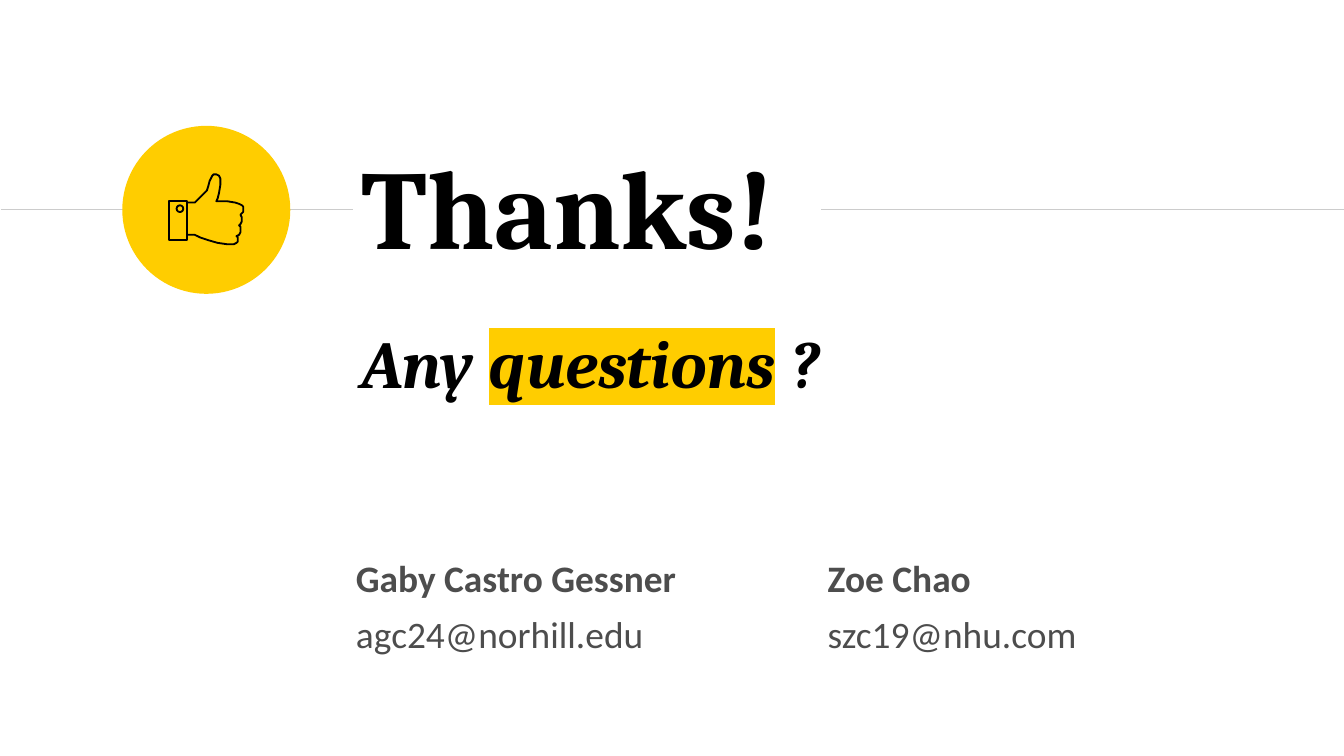
from lxml.etree import SubElement
from pptx import Presentation
from pptx.dml.color import RGBColor
from pptx.enum.shapes import MSO_CONNECTOR as Connector, MSO_SHAPE as Preset
from pptx.enum.text import MSO_ANCHOR as Anchor, MSO_AUTO_SIZE as AutoSize, PP_ALIGN as Align
from pptx.oxml.ns import qn
from pptx.util import Pt

YELLOW, BLACK, GRAY, RULE = "FFCD00", "000000", "4D4D4D", "CCCCCC"
SERIF = {"name": "Cambria", "bold": True}
SANS = {"name": "Calibri", "size": Pt(20), "italic": False}
FRAME = {"word_wrap": True, "auto_size": AutoSize.NONE,
         "margin_left": Pt(7.2), "margin_right": Pt(7.2),
         "margin_top": Pt(7.2), "margin_bottom": Pt(7.2)}

HAND = [(14, 45), (19, 45), (23, 47), (29, 49), (36, 51), (43, 52), (48, 52),
        (50, 51), (51, 50), (51, 47), (50, 46), (52, 45), (53, 43), (53, 39),
        (52, 38), (53, 37), (54, 35), (54, 32), (53, 30), (54, 29), (55, 28),
        (55, 24), (54, 23), (52, 22), (49, 21), (43, 20), (35, 20), (36, 18),
        (37, 14), (38, 8), (38, 3), (37, 1), (35, 0), (33, 0), (32, 1),
        (30, 5), (29, 9), (28, 12), (26, 14), (22, 18), (19, 21), (14, 21)]


def color(hex_value):
    return RGBColor.from_string(hex_value)


def apply(target, values):
    for name, value in values.items():
        setattr(target, name, value)


def place(shape, box):
    apply(shape, dict(zip(("left", "top", "width", "height"), map(Pt, box))))


def write(paragraph, text, style, ink, marker=None):
    run = paragraph.add_run()
    run.text = text
    run.font.color.rgb = color(ink)
    if marker:
        properties = run.font._element
        highlight = SubElement(properties, qn("a:highlight"))
        SubElement(highlight, qn("a:srgbClr")).set("val", marker)
    apply(run.font, style)


def prepare(shape, anchor, space_before):
    frame = shape.text_frame
    apply(frame, {**FRAME, "vertical_anchor": anchor})
    apply(frame.paragraphs[0], {"alignment": Align.LEFT, "space_before": Pt(space_before)})
    return frame.paragraphs[0]


def add_rule(slide, start, end, y):
    rule = slide.shapes.add_connector(Connector.STRAIGHT, Pt(start), Pt(y), Pt(end), Pt(y))
    rule.line.color.rgb = color(RULE)
    rule.line.width = Pt(0.75)
    SubElement(rule._element.spPr, qn("a:effectLst"))


def outline(shape):
    shape.shadow.inherit = False
    shape.fill.background()
    shape.line.color.rgb = color(BLACK)
    shape.line.width = Pt(1)


def add_thumb(slide, left, top):
    cuff = (left, top + 14.4, 9.4, 20.9)
    button = (left + 3.9, top + 16.6, 3.6, 3.6)
    for preset, box in ((Preset.RECTANGLE, cuff), (Preset.OVAL, button)):
        outline(slide.shapes.add_shape(preset, *map(Pt, box)))
    hand = slide.shapes.build_freeform(*HAND[0], scale=Pt(0.72))
    hand.add_line_segments(HAND[1:], close=False)
    outline(hand.convert_to_shape(Pt(left), Pt(top)))


def add_badge(slide, left, top, size):
    badge = slide.shapes.add_shape(Preset.OVAL, *map(Pt, (left, top, size, size)))
    badge.shadow.inherit = False
    badge.fill.solid()
    badge.fill.fore_color.rgb = color(YELLOW)
    badge.line.fill.background()
    add_thumb(slide, left + 25.2, top + 26)


def add_heading(slide, left, top, width, height):
    title = slide.shapes.title
    place(title, (left, top, width, height))
    write(prepare(title, Anchor.MIDDLE, 0), "Thanks!", {**SERIF, "size": Pt(60)}, BLACK)
    middle = 112.4
    add_rule(slide, 0.5, left + 2.6, middle)
    add_rule(slide, left + 253.5, 720, middle)
    add_badge(slide, left - 121, middle - 45, 90)


def add_question(slide, box):
    question = slide.placeholders[1]
    place(question, box)
    paragraph = prepare(question, Anchor.TOP, 6)
    style = {**SERIF, "size": Pt(36), "italic": True}
    for text, marker in (("Any ", None), ("questions", YELLOW), (" ?", None)):
        write(paragraph, text, style, BLACK, marker)


def add_contact(slide, box, name, email):
    contact = slide.shapes.add_textbox(*map(Pt, box))
    write(prepare(contact, Anchor.TOP, 6), name, {**SANS, "bold": True}, GRAY)
    address = contact.text_frame.add_paragraph()
    apply(address, {"alignment": Align.LEFT, "space_before": Pt(6)})
    write(address, email, {**SANS, "bold": False}, GRAY)


def main():
    deck = Presentation()
    apply(deck, {"slide_width": Pt(720), "slide_height": Pt(405)})
    slide = deck.slides.add_slide(deck.slide_layouts[0])
    add_heading(slide, 186.5, 64, 386.6, 91.4)
    add_question(slide, (186.5, 164.9, 395.3, 61.9))
    contacts = ((183.6, 252.7, "Gaby Castro Gessner", "agc24@norhill.edu"),
                (436.3, 236.9, "Zoe Chao", "szc19@nhu.com"))
    for left, width, name, email in contacts:
        add_contact(slide, (left, 290.2, width, 67), name, email)
    deck.save("out.pptx")


if __name__ == "__main__":
    main()
